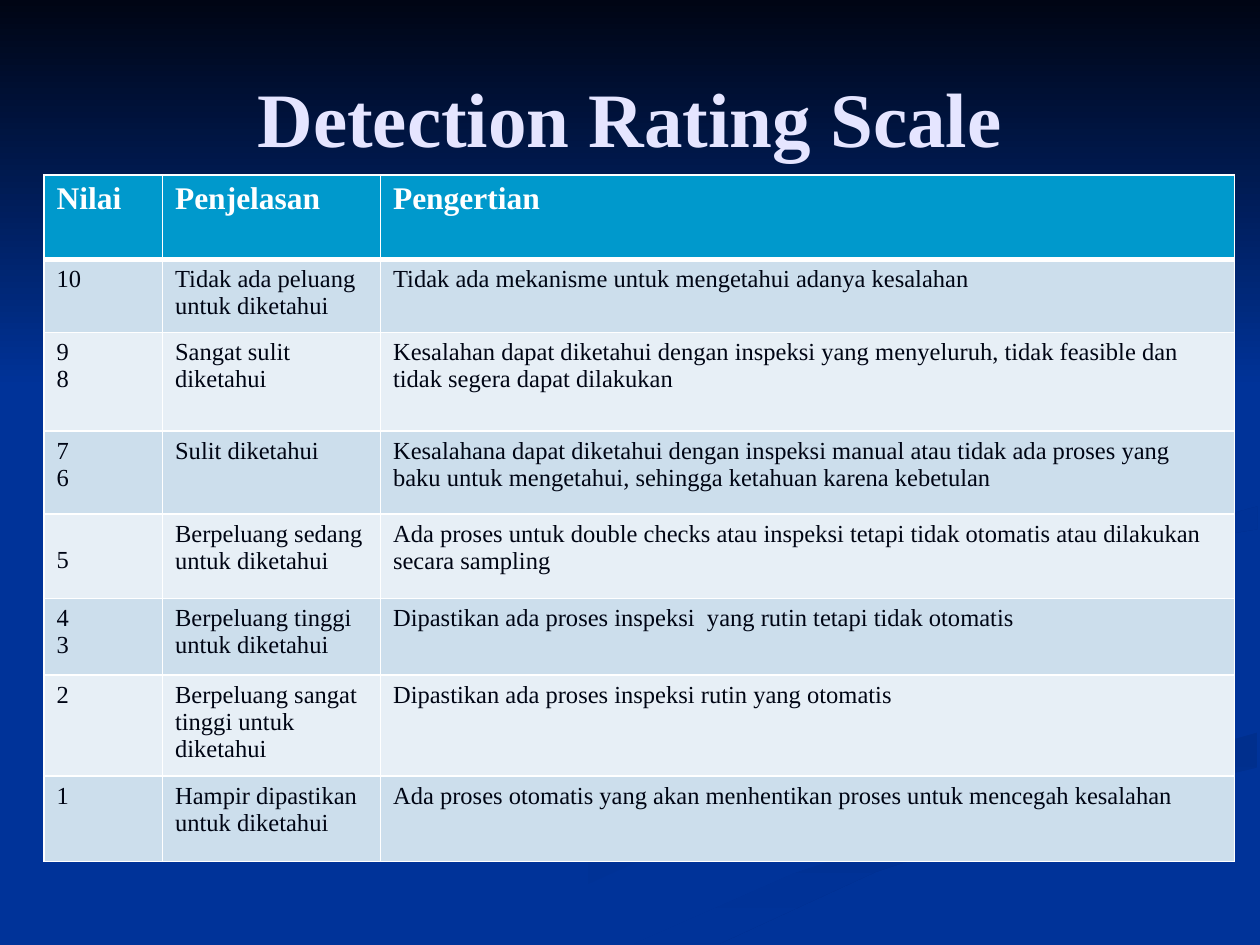
import pptx
import pptx.util
import pptx.dml.color
import pptx.enum.text
import pptx.oxml
import pptx.oxml.ns

RGB = pptx.dml.color.RGBColor
NAVY = RGB(0x00, 0x05, 0x14)
BLUE = RGB(0x00, 0x33, 0x99)
SHADE = RGB(0x00, 0x2F, 0x8D)
SOFT_SHADE = RGB(0x00, 0x31, 0x93)
LAVENDER = RGB(0xE5, 0xE5, 0xFF)
CYAN = RGB(0x00, 0x99, 0xCC)
BAND_DARK = RGB(0xCC, 0xDE, 0xEC)
BAND_LIGHT = RGB(0xE7, 0xEF, 0xF6)
WHITE = RGB(0xFF, 0xFF, 0xFF)

FONT = "Times New Roman"
PX = 9144  # EMU per px, at 100 px to the inch

# Ribbons: first colour, last colour, clockwise angle, outline
RIBBONS = [
    (BLUE, SOFT_SHADE, 0, [
        (575, 459), (781, 556), (727, 602), (458, 674), (300, 749),
        (361, 749), (499, 687), (786, 601), (800, 581), (682, 519)]),
    (BLUE, SOFT_SHADE, 45, [
        (724, 464), (838, 536), (918, 581), (894, 605), (943, 570), (792, 509)]),
    (SHADE, BLUE, 90, [
        (503, 749), (571, 749), (695, 692), (821, 651), (998, 609),
        (998, 581), (797, 638), (630, 693)]),
    (BLUE, BLUE, 0, [
        (725, 464), (943, 570), (743, 643), (477, 749), (503, 749),
        (630, 693), (797, 638), (999, 581), (999, 538), (782, 460),
        (999, 402), (999, 387), (770, 427)]),
    (SHADE, BLUE, 45, [
        (781, 460), (826, 496), (805, 472), (859, 443), (998, 420), (998, 402)]),
    (SHADE, BLUE, 45, [
        (762, 233), (888, 328), (791, 392), (577, 462), (622, 500),
        (594, 465), (825, 402), (894, 344)]),
]

HEADINGS = ["Nilai", "Penjelasan", "Pengertian"]
RATINGS = [
    ("10", "Tidak ada peluang untuk diketahui",
     "Tidak ada mekanisme untuk mengetahui adanya kesalahan"),
    ("9\n8", "Sangat sulit diketahui",
     "Kesalahan dapat diketahui dengan inspeksi yang menyeluruh, "
     "tidak feasible dan tidak segera dapat dilakukan"),
    ("7\n6", "Sulit diketahui",
     "Kesalahana dapat diketahui dengan inspeksi manual atau tidak ada proses "
     "yang baku untuk mengetahui, sehingga ketahuan karena kebetulan"),
    ("5", "Berpeluang sedang untuk diketahui",
     "Ada proses untuk double checks atau inspeksi tetapi tidak otomatis "
     "atau dilakukan secara sampling"),
    ("4\n3", "Berpeluang tinggi untuk diketahui",
     "Dipastikan ada proses inspeksi  yang rutin tetapi tidak otomatis"),
    ("2", "Berpeluang sangat tinggi untuk diketahui",
     "Dipastikan ada proses inspeksi rutin yang otomatis"),
    ("1", "Hampir dipastikan untuk diketahui",
     "Ada proses otomatis yang akan menhentikan proses untuk mencegah kesalahan"),
]
COLUMN_WIDTHS = [94, 173, 678]
ROW_HEIGHTS = [67, 58, 78, 66, 67, 61, 80, 68]


def add_outline(page, left, top, points, first, last, angle):
    """Draw a filled outline whose points are relative to (left, top)."""
    points = [(left + x, top + y) for x, y in points]
    builder = page.shapes.build_freeform(*points[0], scale=PX)
    builder.add_line_segments(points[1:], close=True)
    shape = builder.convert_to_shape()
    shape.shadow.inherit = False
    shape.line.fill.background()
    if first == last:
        shape.fill.solid()
        shape.fill.fore_color.rgb = first
        return
    shape.fill.gradient()
    shape.fill.gradient_angle = (360 - angle) % 360
    for stop, color in zip(shape.fill.gradient_stops, (first, last)):
        stop.color.rgb = color


def add_backdrop(page, left, top, width, height):
    page.background.fill.solid()
    page.background.fill.fore_color.rgb = BLUE
    for first, last, angle, points in RIBBONS:
        add_outline(page, left, top, points, first, last, angle)
    # Dark sky fading down into the blue
    sky = [(0, 0), (0, height), (width, height), (width, 0)]
    add_outline(page, left, top, sky, NAVY, BLUE, 90)


def set_font(para, size, color, bold):
    para.font.name = FONT
    para.font.size = pptx.util.Pt(size)
    para.font.color.rgb = color
    para.font.bold = bold


def place_title(page, left, top, width, height):
    title = page.shapes.title
    page.shapes.element.append(title.element)  # in front of the backdrop
    title.left, title.top = left * PX, top * PX
    title.width, title.height = width * PX, height * PX
    title.text_frame.text = "Detection Rating Scale"
    title.text_frame.vertical_anchor = pptx.enum.text.MSO_ANCHOR.MIDDLE
    para = title.text_frame.paragraphs[0]
    para.alignment = pptx.enum.text.PP_ALIGN.CENTER
    set_font(para, 44, LAVENDER, True)


def set_borders(cell, top, bottom):
    """Give a cell white borders; top and bottom widths are in points."""
    properties = cell._tc.get_or_add_tcPr()
    for side, points in (("L", 1), ("R", 1), ("T", top), ("B", bottom)):
        properties.append(pptx.oxml.parse_xml(
            f'<a:ln{side} {pptx.oxml.ns.nsdecls("a")} w="{points * 12700}">'
            f'<a:solidFill><a:srgbClr val="{WHITE}"/></a:solidFill></a:ln{side}>'))


def add_rating_table(page, left, top):
    rows = [HEADINGS, *RATINGS]
    frame = page.shapes.add_table(
        len(rows), len(HEADINGS), left * PX, top * PX,
        sum(COLUMN_WIDTHS) * PX, sum(ROW_HEIGHTS) * PX)
    table = frame.table
    for column, width in zip(table.columns, COLUMN_WIDTHS):
        column.width = width * PX
    for index, (texts, height) in enumerate(zip(rows, ROW_HEIGHTS)):
        table.rows[index].height = height * PX
        header = index == 0
        band = CYAN if header else BAND_DARK if index % 2 else BAND_LIGHT
        for cell, text in zip(table.rows[index].cells, texts):
            set_borders(cell, 3 if index == 1 else 1, 3 if header else 1)
            cell.fill.solid()
            cell.fill.fore_color.rgb = band
            cell.text = text
            for para in cell.text_frame.paragraphs:
                set_font(para, 18 if header else 14, WHITE if header else NAVY, header)
            if text == "5":  # sits on the second line
                cell.margin_top = 26 * PX


def main():
    deck = pptx.Presentation()
    deck.slide_width, deck.slide_height = 1000 * PX, 750 * PX
    page = deck.slides.add_slide(deck.slide_layouts[5])
    add_backdrop(page, 0, 0, 1000, 308)
    place_title(page, 50, 30, 900, 125)
    add_rating_table(page, 35, 139)
    deck.save("out.pptx")


if __name__ == "__main__":
    main()
